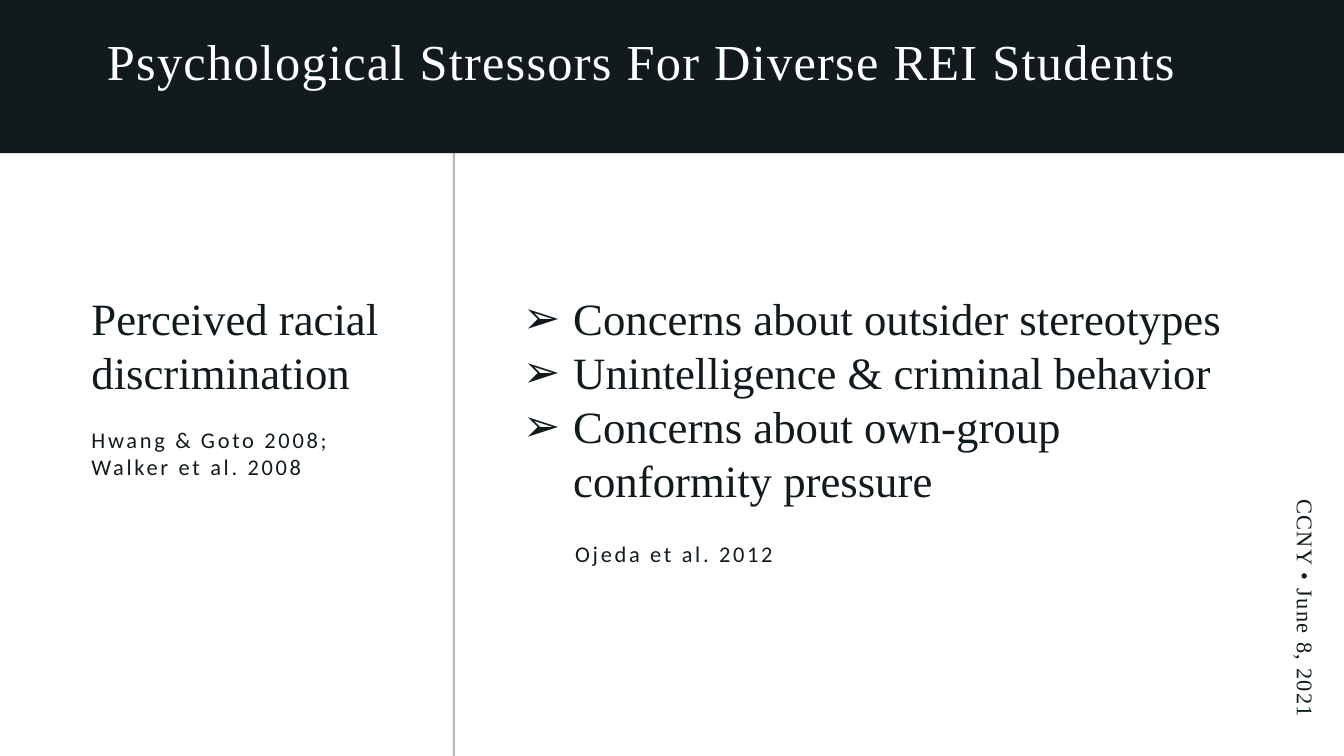
import pptx
import pptx.util
import pptx.dml.color
import pptx.enum.shapes
import pptx.enum.text
import pptx.oxml.ns
from lxml import etree

Inches = pptx.util.Inches
Pt = pptx.util.Pt
RGBColor = pptx.dml.color.RGBColor
qn = pptx.oxml.ns.qn
ALIGN = pptx.enum.text.PP_ALIGN

INK = RGBColor(0x11, 0x1B, 0x1E)
WHITE = RGBColor(0xFF, 0xFF, 0xFF)
SERIF, SANS = "Times New Roman", "Calibri"


def add_rect(s, box, alpha=None):
    """Plain ink rectangle, with opacity in percent if given."""
    sp = s.shapes.add_shape(pptx.enum.shapes.MSO_SHAPE.RECTANGLE,
                            *map(Inches, box))
    sp.shadow.inherit = False
    sp.fill.solid()
    sp.fill.fore_color.rgb = INK
    sp.line.fill.background()
    if alpha is not None:
        clr = sp.element.spPr.find(".//" + qn("a:srgbClr"))
        etree.SubElement(clr, qn("a:alpha"), val=str(alpha * 1000))
    return sp


def add_bullet(p, char, indent):
    pPr = p._p.get_or_add_pPr()
    pPr.set("marL", str(Inches(indent)))
    pPr.set("indent", str(-Inches(indent)))
    etree.SubElement(pPr, qn("a:buFont"), typeface="Arial")
    etree.SubElement(pPr, qn("a:buChar"), char=char)


def write(sp, lines, size, font=SERIF, color=INK, tracking=0,
          leading=None, align=ALIGN.LEFT, bullet=None):
    """Fill a text shape, one paragraph for each line."""
    tf = sp.text_frame
    tf.word_wrap = True
    tf.auto_size = pptx.enum.text.MSO_AUTO_SIZE.NONE
    tf.vertical_anchor = pptx.enum.text.MSO_ANCHOR.TOP
    tf.margin_left = tf.margin_right = tf.margin_top = tf.margin_bottom = 0
    for i, line in enumerate(lines):
        p = tf.add_paragraph() if i else tf.paragraphs[0]
        if bullet:
            add_bullet(p, bullet, 0.75)
        p.alignment = align
        p.space_before = Pt(0)
        if leading:
            p.line_spacing = Pt(leading)
        r = p.add_run()
        r.text = line
        r.font.size = Pt(size)
        r.font.name = font
        r.font.color.rgb = color
        if tracking:
            r._r.get_or_add_rPr().set("spc", str(round(tracking * 100)))


def add_text(s, box, lines, size, **style):
    sp = s.shapes.add_textbox(*map(Inches, box))
    write(sp, lines, size, **style)
    return sp


def add_header(s, box):
    x, y, w, h = box
    band = add_rect(s, box)
    title = s.shapes.title
    title.left, title.top = Inches(x + 1.59), Inches(y + 0.88)
    title.width, title.height = Inches(w - 1.96), Inches(1.05)
    write(title, ["Psychological Stressors For Diverse REI Students"], 54,
          color=WHITE, tracking=1.4, leading=33.6)
    title.element.addprevious(band.element)  # band goes behind the title


def add_topic(s, box):
    x, y, w, h = box
    add_text(s, (x, y, w, 1.62), ["Perceived racial discrimination"], 48,
             leading=58)
    add_text(s, (x, y + 2.02, w, 0.81),
             ["Hwang & Goto 2008; Walker et al. 2008"], 24,
             font=SANS, tracking=2.9)


def add_concerns(s, box):
    x, y, w, h = box
    add_text(s, (x, y, w, 3.24),
             ["Concerns about outsider stereotypes",
              "Unintelligence & criminal behavior",
              "Concerns about own-group conformity pressure"], 48,
             leading=58, bullet="➢")
    add_text(s, (x + 0.78, y + 3.49, 4.45, 0.56), ["Ojeda et al. 2012"], 24,
             font=SANS, tracking=2.9, leading=44.8)


def add_side_note(s, box):
    sp = add_text(s, box, ["CCNY • June 8, 2021"], 24, tracking=1.4,
                  leading=33.6, align=ALIGN.RIGHT)
    sp.rotation = 90


def main():
    prs = pptx.Presentation()
    prs.slide_width, prs.slide_height = Inches(20), Inches(11.25)
    s = prs.slides.add_slide(prs.slide_layouts[5])
    s.background.fill.solid()
    s.background.fill.fore_color.rgb = WHITE

    # Header band and column divider
    add_header(s, (0, 0, 20, 2.28))
    add_rect(s, (6.74, 2.28, 0.03, 8.97), alpha=30)
    # Two columns
    add_topic(s, (1.36, 4.32, 4.45, 2.83))
    add_concerns(s, (7.78, 4.32, 10.72, 4.05))
    # Vertical date line
    add_side_note(s, (16.83, 7.8, 5.29, 0.45))

    prs.save("out.pptx")


if __name__ == "__main__":
    main()
